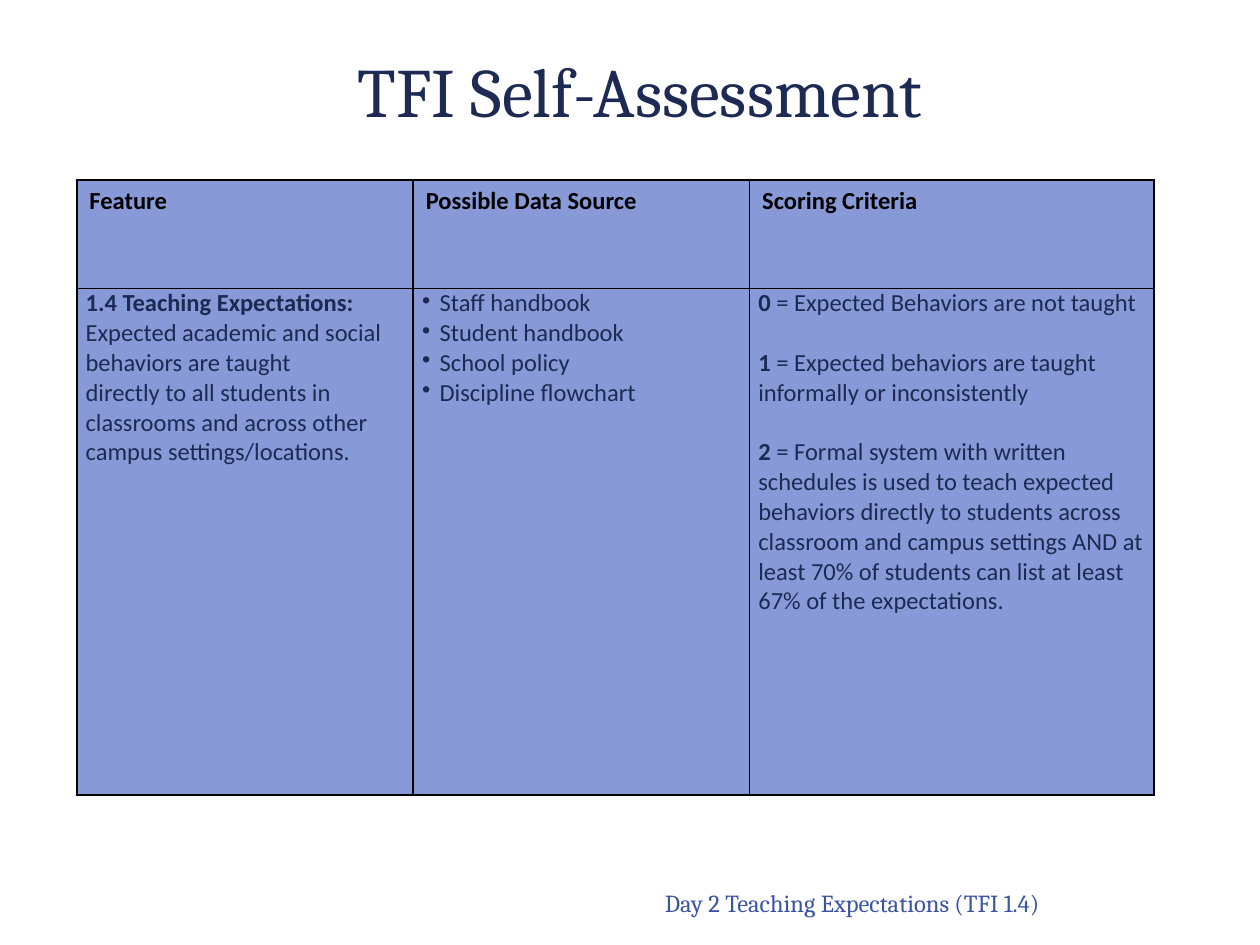
from pptx import Presentation
from pptx.dml.color import RGBColor
from pptx.enum.text import MSO_ANCHOR, PP_ALIGN
from pptx.oxml.ns import qn
from pptx.util import Inches, Pt
from lxml import etree

BLACK = RGBColor(0x00, 0x00, 0x00)
NAVY = RGBColor(0x1D, 0x2A, 0x53)
BLUE = RGBColor(0x3A, 0x53, 0xA5)
PERIWINKLE = RGBColor(0x87, 0x99, 0xD7)
MIDDLE, BOTTOM = MSO_ANCHOR.MIDDLE, MSO_ANCHOR.BOTTOM
CENTER, RIGHT = PP_ALIGN.CENTER, PP_ALIGN.RIGHT

TITLE = "TFI Self-Assessment"
FOOTER = "Day 2 Teaching Expectations (TFI 1.4)"
HEADERS = ["Feature", "Possible Data Source", "Scoring Criteria"]
FEATURE = [
    ("1.4 Teaching Expectations:", ""),
    ("", "Expected academic and social behaviors are taught"),
    ("", "directly to all students in classrooms and across other"),
    ("", "campus settings/locations."),
]
SOURCES = [("", "Staff handbook"), ("", "Student handbook"),
           ("", "School policy"), ("", "Discipline flowchart")]
CRITERIA = [
    ("0", " = Expected Behaviors are not taught"),
    ("1", " = Expected behaviors are taught informally or inconsistently"),
    ("2", " = Formal system with written schedules is used to teach expected "
          "behaviors directly to students across classroom and campus settings "
          "AND at least 70% of students can list at least 67% of the expectations."),
]
BODY = [
    {"lines": FEATURE, "bullet": False, "gap": 0},
    {"lines": SOURCES, "bullet": True, "gap": 0},
    {"lines": CRITERIA, "bullet": False, "gap": 17},
]
COL_WIDTHS = [2.67, 2.67, 3.21]
ROW_HEIGHTS = [0.86, 4.02]
BULLET_INDENT = Inches(0.14)

TITLE_FONT = {"name": "Cambria", "size": Pt(39.6), "bold": False, "color": NAVY}
FOOTER_FONT = {"name": "Cambria", "size": Pt(14), "bold": False, "color": BLUE}
HEADER_FONT = {"name": "Calibri", "size": Pt(14), "bold": True, "color": BLACK}
BODY_FONT = {"name": "Calibri", "size": Pt(14), "bold": False, "color": NAVY}


def add_run(p, text, fmt):
    r = p.add_run()
    r.text = text
    for name, value in fmt.items():
        if name == "color":
            r.font.color.rgb = value
        else:
            setattr(r.font, name, value)


def fill_box(sp, box, text, fmt, align, anchor):
    sp.left, sp.top, sp.width, sp.height = map(Inches, box)
    tf = sp.text_frame
    tf.word_wrap = True
    tf.vertical_anchor = anchor
    p = tf.paragraphs[0]
    p.alignment = align
    add_run(p, text, fmt)


def add_bullet(p):
    pPr = p._p.get_or_add_pPr()
    pPr.set("marL", str(BULLET_INDENT))
    pPr.set("indent", str(-BULLET_INDENT))
    etree.SubElement(pPr, qn("a:buChar"), char="•")


def style_cell(cell, side, end):
    cell.margin_left = cell.margin_right = Inches(side)
    cell.margin_top = cell.margin_bottom = Inches(end)
    tcPr = cell._tc.get_or_add_tcPr()
    for edge in ("a:lnL", "a:lnR", "a:lnT", "a:lnB"):
        ln = etree.SubElement(tcPr, qn(edge), w=str(Pt(1)))
        solid = etree.SubElement(ln, qn("a:solidFill"))
        etree.SubElement(solid, qn("a:srgbClr"), val=str(BLACK))
    cell.fill.solid()
    cell.fill.fore_color.rgb = PERIWINKLE


def fill_body(cell, lines, bullet, gap):
    for i, (lead, rest) in enumerate(lines):
        tf = cell.text_frame
        p = tf.add_paragraph() if i else tf.paragraphs[0]
        if i and gap:
            p.space_before = Pt(gap)
        if bullet:
            add_bullet(p)
        if lead:
            add_run(p, lead, {**BODY_FONT, "bold": True})
        if rest:
            add_run(p, rest, BODY_FONT)


def main():
    prs = Presentation()
    prs.slide_width, prs.slide_height = Inches(10), Inches(7.5)
    s = prs.slides.add_slide(prs.slide_layouts[5])

    footer = s.shapes.add_textbox(0, 0, 0, 0)
    fill_box(footer, (3.63, 6.69, 4.72, 0.64), FOOTER, FOOTER_FONT, RIGHT, BOTTOM)

    table = s.shapes.add_table(
        len(ROW_HEIGHTS), len(COL_WIDTHS), Inches(0.61), Inches(1.43),
        Inches(sum(COL_WIDTHS)), Inches(sum(ROW_HEIGHTS))).table
    for row, height in zip(table.rows, ROW_HEIGHTS):
        row.height = Inches(height)
    for c, (width, header, body) in enumerate(zip(COL_WIDTHS, HEADERS, BODY)):
        table.columns[c].width = Inches(width)
        head_cell, body_cell = table.cell(0, c), table.cell(1, c)
        style_cell(head_cell, 0.1, 0.05)
        style_cell(body_cell, 0.07, 0)
        add_run(head_cell.text_frame.paragraphs[0], header, HEADER_FONT)
        fill_body(body_cell, **body)

    fill_box(s.shapes.title, (1, 0.32, 8.16, 0.79), TITLE, TITLE_FONT, CENTER, MIDDLE)
    prs.save("out.pptx")


if __name__ == "__main__":
    main()
